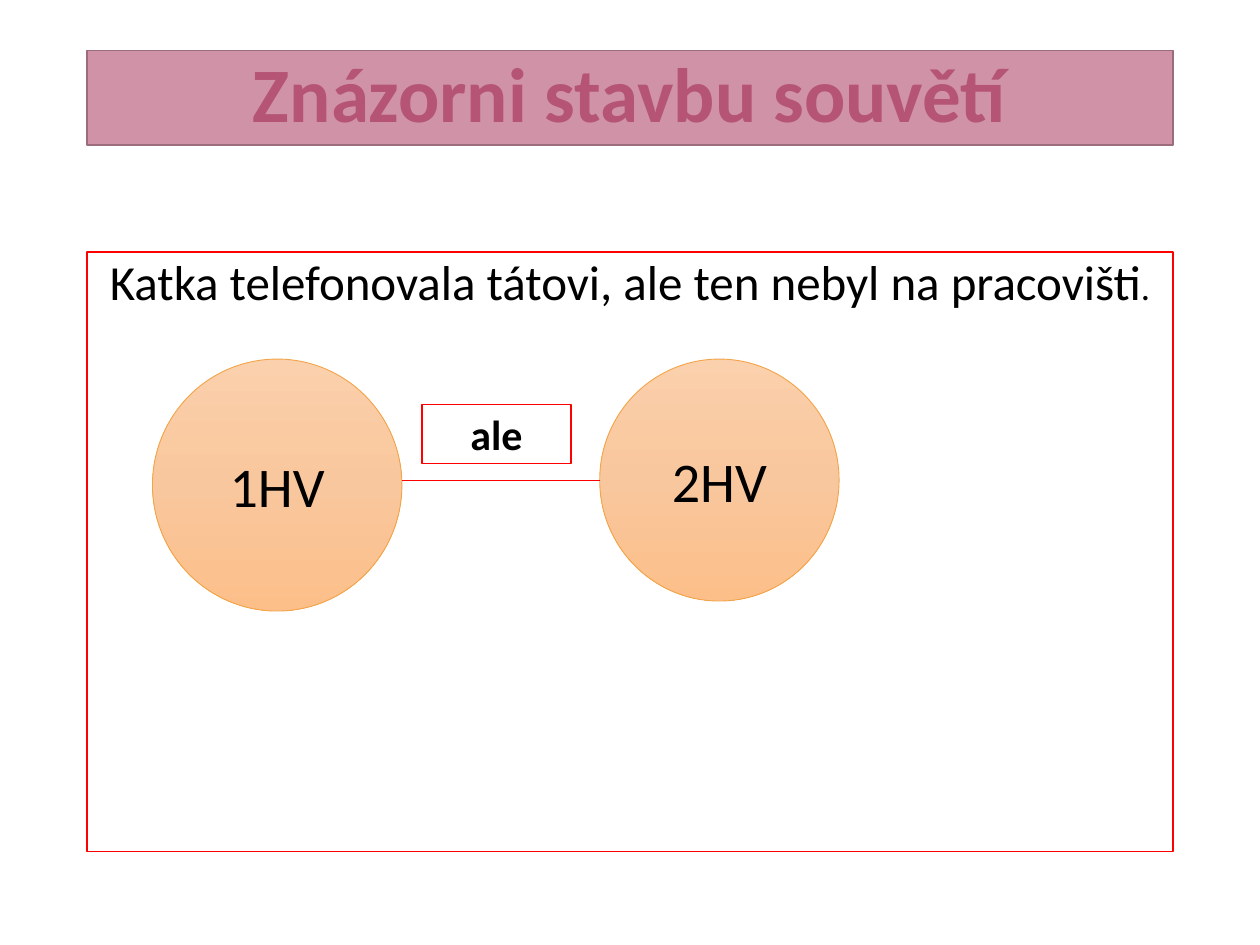
"""Build the slide on the structure of a compound sentence."""
from copy import deepcopy

from lxml import etree
from pptx import Presentation
from pptx import util as u
from pptx.dml.color import RGBColor
from pptx.enum import shapes, text
from pptx.oxml.ns import qn

COLUMNS, ROWS = 100, 75
FONT = "Calibri"
BLACK = RGBColor(0x00, 0x00, 0x00)
RED = RGBColor(0xFF, 0x00, 0x00)
ROSE = RGBColor(0xD0, 0x92, 0xA7)
ROSE_EDGE = RGBColor(0x9A, 0x6C, 0x7C)
ROSE_TEXT = RGBColor(0xB5, 0x54, 0x75)
ORANGE_EDGE = RGBColor(0xF3, 0xA4, 0x47)
ORANGE_STOPS = (
    (0, RGBColor(0xFB, 0xD0, 0xAC)),
    (0.5, RGBColor(0xF9, 0xC7, 0x9D)),
    (1, RGBColor(0xFC, 0xBF, 0x8A)),
)


class ClauseSlide:
    """Hold the shared style and the current slide."""

    def __init__(self, deck):
        self.slide = deck.slides.add_slide(deck.slide_layouts[5])
        self.column = deck.slide_width / COLUMNS
        self.row = deck.slide_height / ROWS

    def place(self, *cells):
        units = (self.column, self.row, self.column, self.row)
        return [u.Emu(round(cell * unit)) for cell, unit in zip(cells, units)]

    def outline(self, line, color, width):
        line.color.rgb = color
        line.width = u.Pt(width)

    def set_words(self, shape, runs, color=BLACK, bold=False,
                  anchor=text.MSO_ANCHOR.MIDDLE, **spacing):
        frame = shape.text_frame
        frame_format = {"word_wrap": True, "vertical_anchor": anchor,
                        "auto_size": text.MSO_AUTO_SIZE.NONE}
        for name, value in frame_format.items():
            setattr(frame, name, value)
        paragraph = frame.paragraphs[0]
        for name, value in {"alignment": text.PP_ALIGN.CENTER, **spacing}.items():
            setattr(paragraph, name, value)
        for words, size in runs:
            run = paragraph.add_run()
            run.text = words
            run.font.color.rgb = color
            for name, value in {"name": FONT, "size": u.Pt(size), "bold": bold}.items():
                setattr(run.font, name, value)

    def title(self, cells, words):
        heading = self.slide.shapes.title
        for name, value in zip(("left", "top", "width", "height"), self.place(*cells)):
            setattr(heading, name, value)
        heading.fill.solid()
        heading.fill.fore_color.rgb = ROSE
        self.outline(heading.line, ROSE_EDGE, 1)
        self.set_words(heading, [(words, 44)], ROSE_TEXT, True, line_spacing=0.9)

    def shape(self, kind, cells, edge, width):
        added = self.slide.shapes.add_shape(kind, *self.place(*cells))
        added.shadow.inherit = False
        added.fill.background()
        self.outline(added.line, edge, width)
        return added

    def box(self, cells, runs, width, **style):
        frame = self.shape(shapes.MSO_SHAPE.RECTANGLE, cells, RED, width)
        self.set_words(frame, runs, **style)

    def clause(self, cells, label):
        circle = self.shape(shapes.MSO_SHAPE.OVAL, cells, ORANGE_EDGE, 0.5)
        circle.fill.gradient()
        circle.fill.gradient_angle = 270
        first_stop = next(circle._element.spPr.iter(qn("a:gs")))
        first_stop.addnext(deepcopy(first_stop))
        for stop, (position, color) in zip(circle.fill.gradient_stops, ORANGE_STOPS):
            stop.position = position
            stop.color.rgb = color
        self.set_words(circle, [(label, 32)])

    def link(self, start, end):
        joint = self.slide.shapes.add_connector(
            shapes.MSO_CONNECTOR.STRAIGHT, *self.place(*start, *end))
        self.outline(joint.line, RED, 0.5)
        etree.SubElement(joint._element.spPr, qn("a:effectLst"))


def main():
    deck = Presentation()
    deck.slide_width, deck.slide_height = u.Inches(10), u.Inches(7.5)
    page = ClauseSlide(deck)
    page.title((6.9, 4, 86.2, 7.5), "Znázorni stavbu souvětí")
    sentence = [("Katka telefonovala tátovi, ale ten nebyl na pracovišti", 28), (".", 21)]
    page.box((6.9, 20, 86.2, 47.6), sentence, 0.75, anchor=text.MSO_ANCHOR.TOP,
             line_spacing=0.9, space_before=u.Pt(7.5))
    page.clause((12.1, 28.5, 19.8, 20), "1HV")
    page.clause((47.6, 28.5, 19, 19.2), "2HV")
    page.link((31.9, 38.1), (47.6, 38.1))
    page.box((33.5, 32.1, 11.8, 4.7), [("ale", 24)], 1, bold=True)
    deck.save("out.pptx")


if __name__ == "__main__":
    main()
